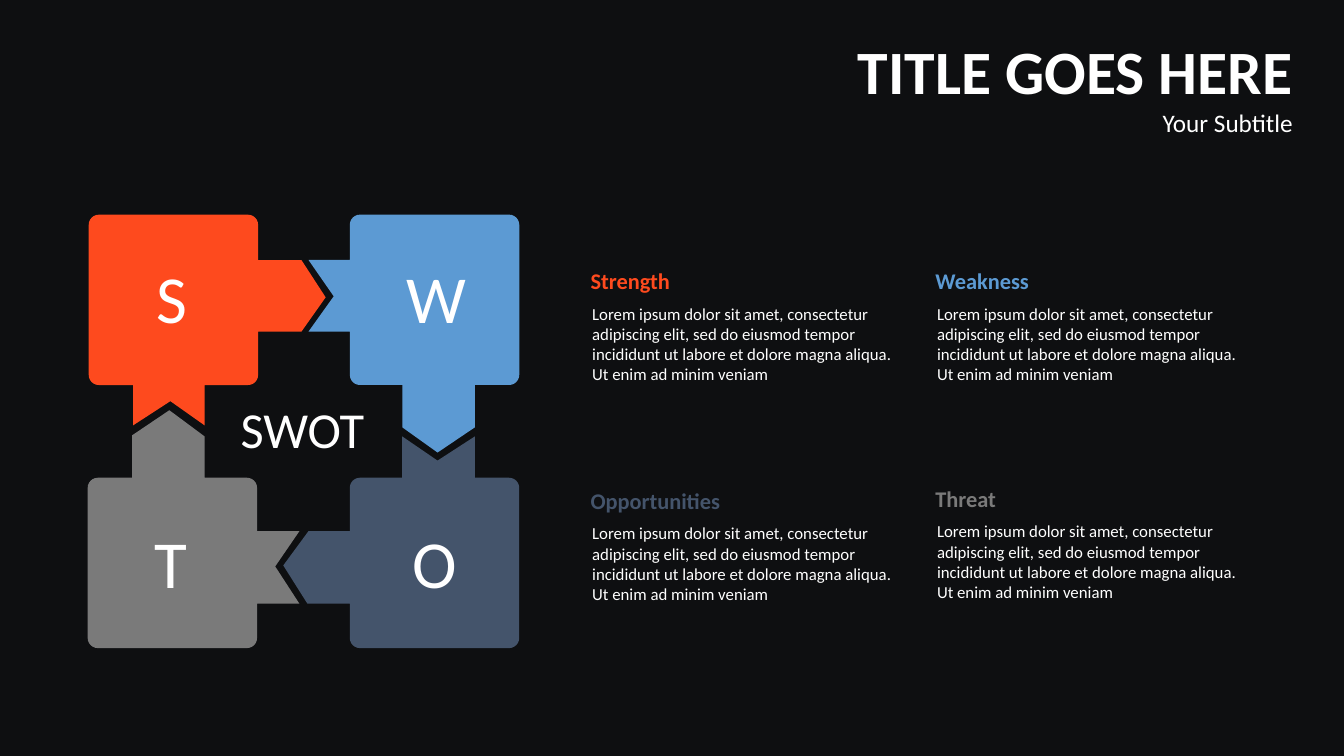
from dataclasses import dataclass
from math import cos, pi, sin

from pptx import Presentation
from pptx.dml.color import RGBColor
from pptx.enum.text import MSO_AUTO_SIZE, PP_ALIGN
from pptx.slide import Slide
from pptx.text.text import TextFrame
from pptx.util import Inches, Pt

LEFT, CENTER, RIGHT = PP_ALIGN.LEFT, PP_ALIGN.CENTER, PP_ALIGN.RIGHT
FIT_SHAPE = MSO_AUTO_SIZE.SHAPE_TO_FIT_TEXT

BLACK = RGBColor(0x0E, 0x0F, 0x11)
WHITE = RGBColor(0xFF, 0xFF, 0xFF)
ORANGE = RGBColor(0xFE, 0x4A, 0x1E)
BLUE = RGBColor(0x5C, 0x9A, 0xD3)
GRAY = RGBColor(0x7A, 0x7A, 0x7A)
NAVY = RGBColor(0x44, 0x54, 0x6B)

FONT = "Calibri"
PIECE_WIDTH, PIECE_HEIGHT = 1.68, 1.69
CORNER_RADIUS = 0.1
CORNER_STEPS = 6
LOREM = (
    "Lorem ipsum dolor sit amet, consectetur adipiscing elit, sed do eiusmod "
    "tempor incididunt ut labore et dolore magna aliqua. Ut enim ad minim veniam"
)

Point = tuple[float, float]


@dataclass(frozen=True)
class Piece:
    letter: str
    color: RGBColor
    left: float
    top: float
    letter_left: float
    letter_top: float
    tabs: dict[str, list[Point]]


@dataclass(frozen=True)
class Topic:
    heading: str
    color: RGBColor
    left: float
    top: float
    heading_width: float = 1.93


PIECES = [
    Piece("S", ORANGE, 0.88, 2.13, 0.86, 2.49, {
        "right": [(2.99, 2.58), (3.23, 2.95), (2.99, 3.29)],
        "bottom": [(2.03, 4.22), (1.69, 3.98), (1.32, 4.22)],
    }),
    Piece("W", BLUE, 3.47, 2.13, 3.48, 2.49, {
        "bottom": [(4.71, 4.24), (4.34, 4.49), (3.99, 4.24)],
        "left": [(3.06, 3.29), (3.31, 2.94), (3.06, 2.58)],
    }),
    Piece("T", GRAY, 0.87, 4.74, 0.84, 5.12, {
        "top": [(1.31, 4.32), (1.68, 4.07), (2.03, 4.33)],
        "right": [(2.97, 5.27), (2.73, 5.62), (2.97, 5.99)],
    }),
    Piece("O", NAVY, 3.47, 4.74, 3.46, 5.12, {
        "top": [(3.99, 4.33), (4.34, 4.57), (4.71, 4.33)],
        "left": [(3.05, 5.99), (2.81, 5.61), (3.06, 5.27)],
    }),
]

TOPICS = [
    Topic("Strength", ORANGE, 5.76, 2.6),
    Topic("Weakness", BLUE, 9.18, 2.6),
    Topic("Opportunities", NAVY, 5.76, 4.78, heading_width=2.83),
    Topic("Threat", GRAY, 9.18, 4.76),
]


def add_frame(slide: Slide, left: float, top: float, width: float, height: float) -> TextFrame:
    frame = slide.shapes.add_textbox(
        Inches(left), Inches(top), Inches(width), Inches(height)
    ).text_frame
    frame.word_wrap = True
    frame.auto_size = FIT_SHAPE
    return frame


def write(
    frame: TextFrame,
    text: str,
    *,
    size: float,
    color: RGBColor = WHITE,
    bold: bool = False,
    align: PP_ALIGN = LEFT,
) -> None:
    paragraph = frame.add_paragraph() if frame.text else frame.paragraphs[0]
    paragraph.alignment = align
    run = paragraph.add_run()
    run.text = text
    run.font.name = FONT
    run.font.size = Pt(size)
    run.font.bold = bold
    run.font.color.rgb = color


def corner(center_x: float, center_y: float, start: float) -> list[Point]:
    angles = [start + pi / 2 * step / CORNER_STEPS for step in range(CORNER_STEPS + 1)]
    return [
        (center_x + CORNER_RADIUS * cos(angle), center_y + CORNER_RADIUS * sin(angle))
        for angle in angles
    ]


def tab_points(piece: Piece, side: str) -> list[Point]:
    tab = piece.tabs.get(side)
    if not tab:
        return []
    first, last = tab[0], tab[-1]
    if side in ("top", "bottom"):
        edge = piece.top + (PIECE_HEIGHT if side == "bottom" else 0)
        return [(first[0], edge), *tab, (last[0], edge)]
    edge = piece.left + (PIECE_WIDTH if side == "right" else 0)
    return [(edge, first[1]), *tab, (edge, last[1])]


def piece_outline(piece: Piece) -> list[Point]:
    near_left = piece.left + CORNER_RADIUS
    near_right = piece.left + PIECE_WIDTH - CORNER_RADIUS
    near_top = piece.top + CORNER_RADIUS
    near_bottom = piece.top + PIECE_HEIGHT - CORNER_RADIUS
    return [
        *corner(near_left, near_top, pi),
        *tab_points(piece, "top"),
        *corner(near_right, near_top, 1.5 * pi),
        *tab_points(piece, "right"),
        *corner(near_right, near_bottom, 0),
        *tab_points(piece, "bottom"),
        *corner(near_left, near_bottom, pi / 2),
        *tab_points(piece, "left"),
    ]


def draw_piece(slide: Slide, piece: Piece) -> None:
    start, *rest = [(Inches(x), Inches(y)) for x, y in piece_outline(piece)]
    builder = slide.shapes.build_freeform(*start)
    builder.add_line_segments(rest, close=True)
    puzzle = builder.convert_to_shape()
    puzzle.shadow.inherit = False
    puzzle.fill.solid()
    puzzle.fill.fore_color.rgb = piece.color
    puzzle.line.fill.background()
    letter = add_frame(slide, piece.letter_left, piece.letter_top, 1.7, 0.91)
    write(letter, piece.letter, size=48, align=CENTER)


def draw_topic(slide: Slide, topic: Topic) -> None:
    heading = add_frame(slide, topic.left, topic.top, topic.heading_width, 0.37)
    write(heading, topic.heading, size=16, color=topic.color, bold=True)
    body = add_frame(slide, topic.left + 0.015, topic.top + 0.36, 3.19, 0.91)
    write(body, LOREM, size=12)


def main() -> None:
    deck = Presentation()
    deck.slide_width, deck.slide_height = Inches(13.33), Inches(7.5)
    slide = deck.slides.add_slide(deck.slide_layouts[6])
    slide.background.fill.solid()
    slide.background.fill.fore_color.rgb = BLACK

    for piece in PIECES:
        draw_piece(slide, piece)
    write(add_frame(slide, 2.03, 3.9, 1.94, 0.73), "SWOT", size=36, align=CENTER)
    for topic in TOPICS:
        draw_topic(slide, topic)

    title = add_frame(slide, 6.9, 0.28, 6.02, 1.14)
    write(title, "TITLE GOES HERE", size=44, bold=True, align=RIGHT)
    write(title, "Your Subtitle", size=18, align=RIGHT)
    deck.save("out.pptx")


if __name__ == "__main__":
    main()
